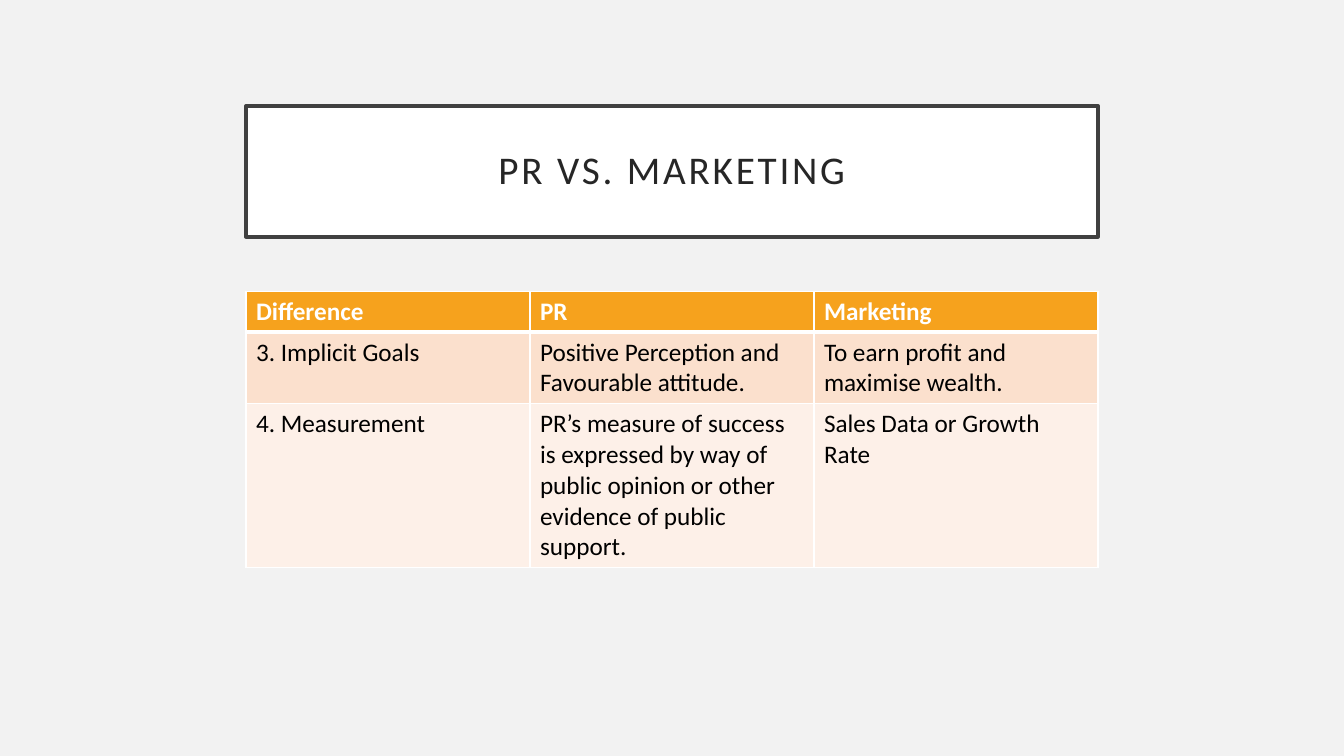
from pptx import Presentation
from pptx.dml.color import RGBColor
from pptx.enum.shapes import MSO_SHAPE as Shape
from pptx.enum.text import MSO_ANCHOR as Anchor, PP_ALIGN as Align
from pptx.oxml import parse_xml
from pptx.oxml.ns import nsdecls
from pptx.util import Pt


def color(hex_value):
    return RGBColor.from_string(hex_value)


class SlideBuilder:
    """Holds the style and the current slide."""
    font = "Calibri"
    white = "FFFFFF"
    header_fill = "F6A21D"
    band_fills = ("FBE0CD", "FDF0E8")

    def __init__(self, slide, background):
        self.slide = slide
        slide.background.fill.solid()
        slide.background.fill.fore_color.rgb = color(background)

    def style(self, paragraph, size, hex_value, bold=False):
        font = paragraph.font
        font.name, font.size, font.bold = self.font, Pt(size), bold
        font.color.rgb = color(hex_value)

    def title(self, text, left, top, width, height):
        shape = self.slide.shapes.add_shape(
            Shape.RECTANGLE, Pt(left), Pt(top), Pt(width), Pt(height))
        shape.shadow.inherit = False
        shape.fill.solid()
        shape.fill.fore_color.rgb = color(self.white)
        shape.line.color.rgb = color("404040")
        shape.line.width = Pt(2.5)
        frame = shape.text_frame
        frame.word_wrap = True
        frame.vertical_anchor = Anchor.MIDDLE
        frame.margin_left = frame.margin_right = Pt(14.4)
        frame.margin_top = frame.margin_bottom = Pt(14.4)
        paragraph = frame.paragraphs[0]
        paragraph.alignment = Align.CENTER
        paragraph.line_spacing = 0.9
        run = paragraph.add_run()
        run.text = text
        self.style(paragraph, 28, "262626")
        # Letter spacing, in hundredths of a point
        run.font._element.set("spc", "200")

    def borders(self, cell, top, bottom):
        widths = {"lnL": 1, "lnR": 1, "lnT": top, "lnB": bottom}
        properties = cell._tc.get_or_add_tcPr()
        for index, (side, width) in enumerate(widths.items()):
            properties.insert(index, parse_xml(
                f'<a:{side} {nsdecls("a")} w="{Pt(width)}"><a:solidFill>'
                f'<a:srgbClr val="{self.white}"/></a:solidFill></a:{side}>'))

    def table(self, rows, left, top, column_width, row_heights):
        columns = len(rows[0])
        table = self.slide.shapes.add_table(
            len(rows), columns, Pt(left), Pt(top),
            Pt(column_width * columns), Pt(sum(row_heights))).table
        for column in table.columns:
            column.width = Pt(column_width)
        for r, (texts, height) in enumerate(zip(rows, row_heights)):
            table.rows[r].height = Pt(height)
            header = r == 0
            fill = self.header_fill if header else self.band_fills[(r - 1) % 2]
            for c, text in enumerate(texts):
                cell = table.cell(r, c)
                cell.text = text
                cell.fill.solid()
                cell.fill.fore_color.rgb = color(fill)
                self.borders(cell, top=3 if r == 1 else 1,
                             bottom=3 if header else 1)
                for paragraph in cell.text_frame.paragraphs:
                    self.style(paragraph, 18,
                               self.white if header else "000000", header)


def main():
    presentation = Presentation()
    presentation.slide_width, presentation.slide_height = Pt(960), Pt(540)
    slide = presentation.slides.add_slide(presentation.slide_layouts[6])
    builder = SlideBuilder(slide, "F2F2F2")

    # Title box
    builder.title("PR VS. MARKETING", 175.7, 75.6, 608.6, 93.6)

    # Comparison table
    builder.table([
        ("Difference", "PR", "Marketing"),
        ("3. Implicit Goals",
         "Positive Perception and\nFavourable attitude.",
         "To earn profit and maximise wealth."),
        ("4. Measurement",
         "PR’s measure of success is expressed by way of public opinion "
         "or other evidence of public support.",
         "Sales Data or Growth Rate"),
    ], 175.7, 208, 202.87, (29.2, 51.1, 117))

    presentation.save("out.pptx")


if __name__ == "__main__":
    main()
